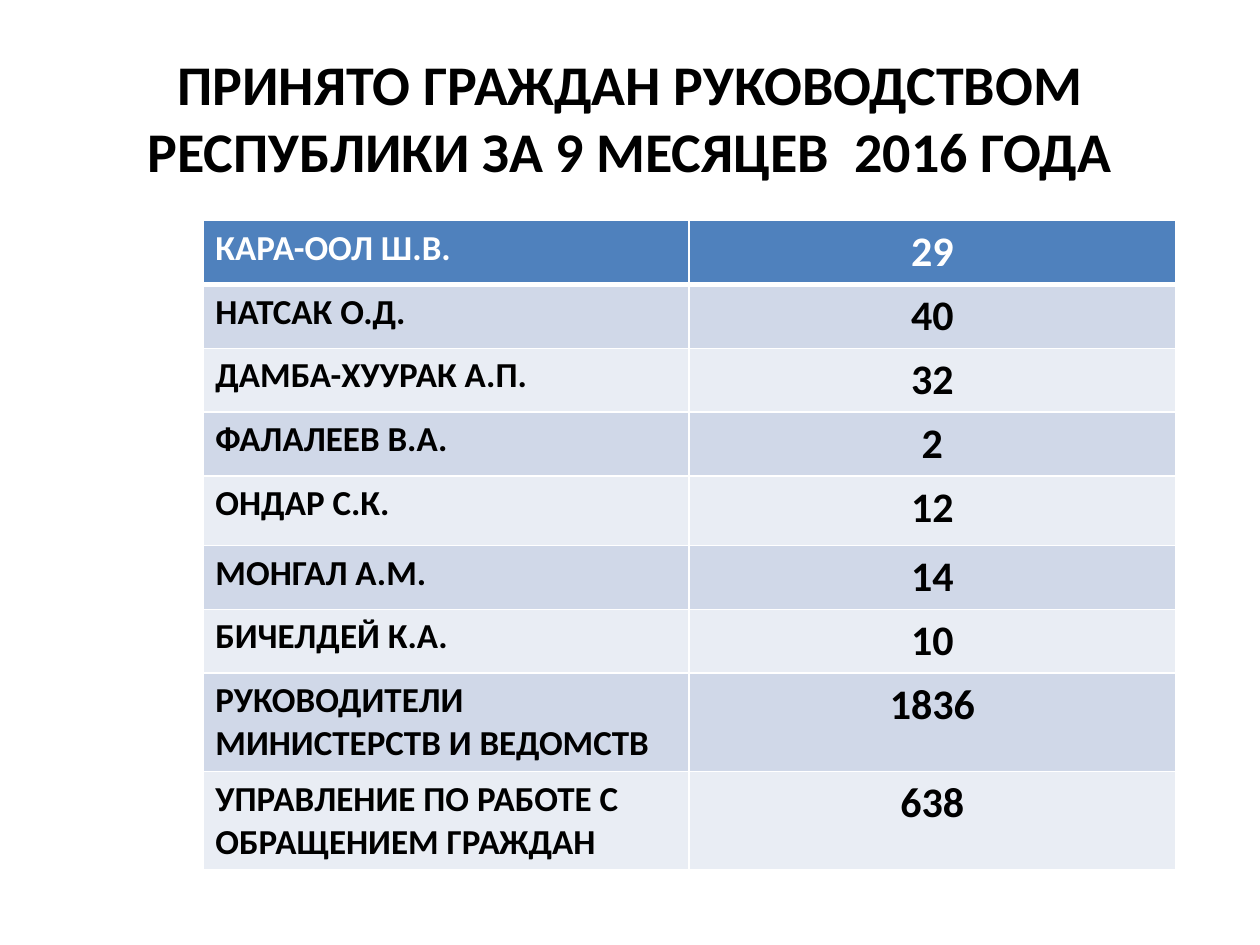
from dataclasses import dataclass

from lxml.etree import SubElement
from pptx import Presentation
from pptx.dml.color import RGBColor
from pptx.enum.text import MSO_ANCHOR as Anchor, PP_ALIGN as Align
from pptx.oxml.ns import qn
from pptx.util import Inches, Pt


@dataclass(frozen=True)
class Theme:
    font: str = "Calibri"
    ink: str = "000000"
    paper: str = "FFFFFF"
    header: str = "4F81BD"
    bands: tuple = ("D0D8E8", "E9EDF4")
    title_size: int = 32
    name_size: int = 20
    count_size: int = 24
    rule: int = 1
    header_rule: int = 3


THEME = Theme()
TITLE = "ПРИНЯТО ГРАЖДАН РУКОВОДСТВОМ РЕСПУБЛИКИ ЗА 9 МЕСЯЦЕВ  2016 ГОДА"
RECEPTIONS = [
    ("КАРА-ООЛ Ш.В.", 29, 0.43),
    ("НАТСАК О.Д.", 40, 0.43),
    ("ДАМБА-ХУУРАК А.П.", 32, 0.43),
    ("ФАЛАЛЕЕВ В.А.", 2, 0.43),
    ("ОНДАР С.К.", 12, 0.55),
    ("МОНГАЛ А.М.", 14, 0.43),
    ("БИЧЕЛДЕЙ К.А.", 10, 0.43),
    ("РУКОВОДИТЕЛИ МИНИСТЕРСТВ И ВЕДОМСТВ", 1836, 0.75),
    ("УПРАВЛЕНИЕ ПО РАБОТЕ С ОБРАЩЕНИЕМ ГРАЖДАН", 638, 0.75),
]


def write_text(frame, wording, size, color, align):
    paragraph = frame.paragraphs[0]
    paragraph.alignment = align
    run = paragraph.add_run()
    run.text = wording
    font_format = {"name": THEME.font, "size": Pt(size), "bold": True}
    for attribute, value in font_format.items():
        setattr(run.font, attribute, value)
    run.font.color.rgb = RGBColor.from_string(color)


def add_title(slide):
    title = slide.shapes.title
    position = {"left": 0.5, "top": 0.3, "width": 9, "height": 1.25}
    for attribute, value in position.items():
        setattr(title, attribute, Inches(value))
    title.text_frame.word_wrap = True
    title.text_frame.vertical_anchor = Anchor.MIDDLE
    write_text(title.text_frame, TITLE, THEME.title_size, THEME.ink, Align.CENTER)


def set_borders(cell, top, bottom):
    properties = cell._tc.get_or_add_tcPr()
    widths = {"lnL": THEME.rule, "lnR": THEME.rule, "lnT": top, "lnB": bottom}
    for edge, width in widths.items():
        line = SubElement(properties, qn(f"a:{edge}"), w=str(Pt(width)))
        fill = SubElement(line, qn("a:solidFill"))
        SubElement(fill, qn("a:srgbClr"), val=THEME.paper)


def style_cell(cell, row_number):
    is_header = row_number == 0
    set_borders(
        cell,
        top=THEME.header_rule if row_number == 1 else THEME.rule,
        bottom=THEME.header_rule if is_header else THEME.rule,
    )
    color = THEME.header if is_header else THEME.bands[(row_number - 1) % 2]
    cell.fill.solid()
    cell.fill.fore_color.rgb = RGBColor.from_string(color)


def add_receptions_table(slide):
    total_height = sum(height for _, _, height in RECEPTIONS)
    table = slide.shapes.add_table(
        len(RECEPTIONS), 2, Inches(1.61), Inches(1.75), Inches(7.72), Inches(total_height)
    ).table
    for row_number, (name, count, height) in enumerate(RECEPTIONS):
        table.rows[row_number].height = Inches(height)
        color = THEME.ink if row_number else THEME.paper
        entries = (
            (name, THEME.name_size, Align.LEFT),
            (str(count), THEME.count_size, Align.CENTER),
        )
        for column_number, (wording, size, align) in enumerate(entries):
            cell = table.cell(row_number, column_number)
            style_cell(cell, row_number)
            write_text(cell.text_frame, wording, size, color, align)


def main():
    deck = Presentation()
    deck.slide_width, deck.slide_height = Inches(10), Inches(7.5)
    slide = deck.slides.add_slide(deck.slide_layouts[5])
    add_title(slide)
    add_receptions_table(slide)
    deck.save("out.pptx")


if __name__ == "__main__":
    main()
